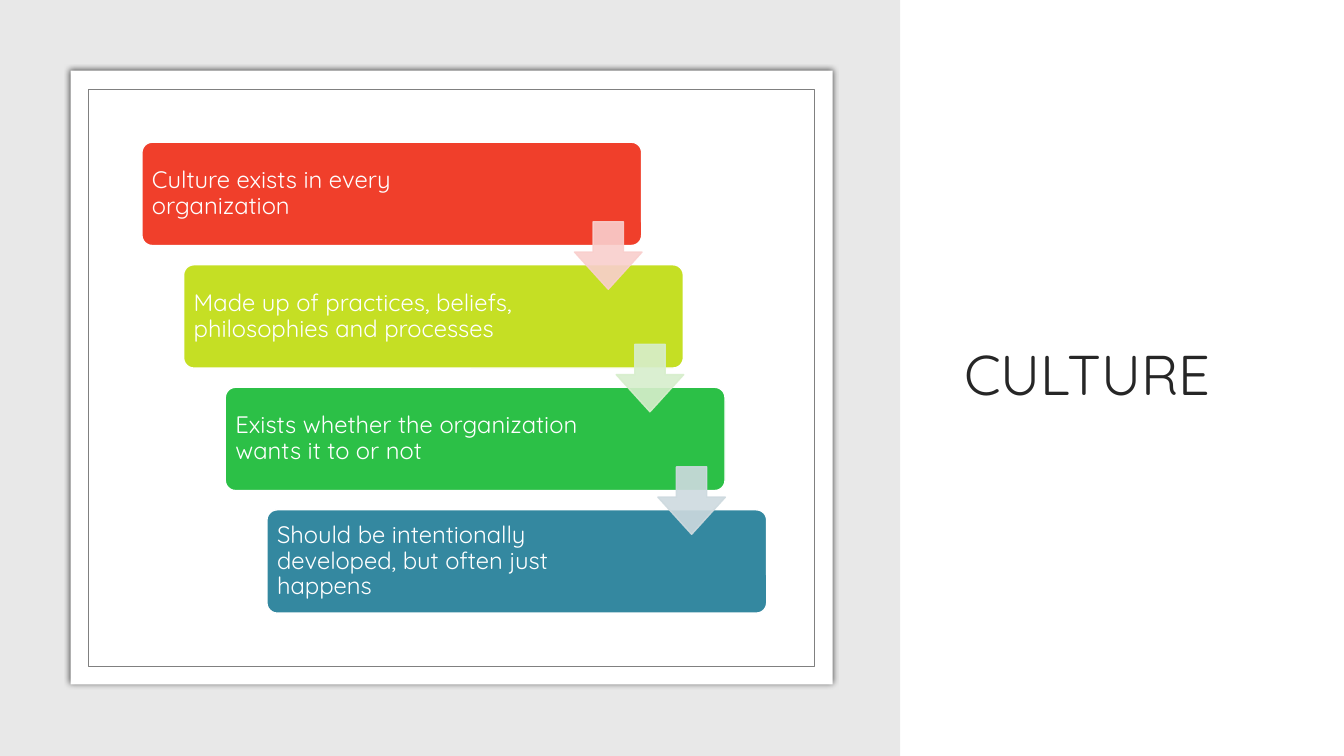
import lxml.etree
import pptx
import pptx.dml.color
import pptx.enum.shapes
import pptx.enum.text
import pptx.oxml.ns
import pptx.util

Pt = pptx.util.Pt
Kind = pptx.enum.shapes.MSO_SHAPE

TITLE = "CULTURE"
STEPS = [
    ("Culture exists in every organization", "F03F2B"),
    ("Made up of practices, beliefs, philosophies and processes", "C5DF24"),
    ("Exists whether the organization wants it to or not", "2CC047"),
    ("Should be intentionally developed, but often just happens", "3488A0"),
]
ARROWS = ["F9CFCD", "D7EECC", "CEDADF"]

THEME = {
    "font": "Quicksand", "white": "FFFFFF", "ink": "262626",
    "side": "D9D9D9", "frame": "808080", "shade": "000000",
    "title": 40, "body": 17,
}

WIDE, HIGH = 960, 540
DX, DY = 29.76, 87.52       # shift from one step to the next
BAR = (101.4, 101.6, 357, 73.8)
ARROW = (410.4, 158.4, 48.24, 48.24)
INSET = 2.16
TEXT_WIDE = [270.7, 274.3, 275, 274.3]


def tint(value):
    return pptx.dml.color.RGBColor.from_string(value)


def node(parent, name, **attrs):
    """Add a DrawingML child element."""
    return lxml.etree.SubElement(parent, pptx.oxml.ns.qn(name), attrs)


def draw(kind, box, fill, line=None, weight=1, alpha=100, adjust=()):
    shape = slide.shapes.add_shape(kind, *map(Pt, box))
    shape.shadow.inherit = False
    for spot, value in enumerate(adjust):
        shape.adjustments[spot] = value
    shape.fill.solid()
    shape.fill.fore_color.rgb = tint(fill)
    if line:
        shape.line.color.rgb = tint(line)
        shape.line.width = Pt(weight)
    else:
        shape.line.fill.background()
    if alpha < 100:
        for color in shape.element.spPr.iter(pptx.oxml.ns.qn("a:srgbClr")):
            node(color, "a:alpha", val=str(alpha * 1000))
    return shape


def glow(shape, blur, alpha):
    """Give the shape a soft shadow on all sides."""
    effects = shape.element.spPr.find(pptx.oxml.ns.qn("a:effectLst"))
    shadow = node(effects, "a:outerShdw", blurRad=str(Pt(blur)), dist="0",
                  dir="0", algn="ctr", rotWithShape="0")
    color = node(shadow, "a:srgbClr", val=THEME["shade"])
    node(color, "a:alpha", val=str(alpha * 1000))


def write(text, box, size, color, after=0, **frame):
    area = slide.shapes.add_textbox(*map(Pt, box)).text_frame
    frame |= {"word_wrap": True,
              "vertical_anchor": pptx.enum.text.MSO_ANCHOR.MIDDLE}
    para = area.paragraphs[0]
    run = para.add_run()
    formats = [
        (area, frame),
        (para, {"line_spacing": 0.9, "space_after": Pt(after)}),
        (run, {"text": text}),
        (run.font, {"name": THEME["font"], "size": Pt(size)}),
        (run.font.color, {"rgb": tint(color)}),
    ]
    for target, values in formats:
        for name, value in values.items():
            setattr(target, name, value)


def shift(box, index):
    left, top, wide, high = box
    return left + index * DX, top + index * DY, wide, high


deck = pptx.Presentation()
deck.slide_width, deck.slide_height = Pt(WIDE), Pt(HIGH)
slide = deck.slides.add_slide(deck.slide_layouts[6])
white = THEME["white"]

draw(Kind.RECTANGLE, (0, 0, WIDE, HIGH), white)
write(TITLE, (681.84, 50.4, 227.5, 438.5), THEME["title"], THEME["ink"])
draw(Kind.RECTANGLE, (0, 0, 643, HIGH), THEME["side"], alpha=60)
card = draw(Kind.RECTANGLE, (50.4, 50.4, 544.3, 438.5), white)
glow(card, 4, 66)
draw(Kind.RECTANGLE, (63.36, 64.08, 518.4, 412.2), white, THEME["frame"], 0.5)

margins = {f"margin_{side}": Pt(5.04)
           for side in ("left", "top", "right", "bottom")}
for index, (text, fill) in enumerate(STEPS):
    bar = shift(BAR, index)
    draw(Kind.ROUNDED_RECTANGLE, bar, fill, white, adjust=[0.1])
    left, top, wide, high = bar
    inner = (left + INSET, top + INSET, TEXT_WIDE[index], high - 2 * INSET)
    write(text, inner, THEME["body"], white, after=6, **margins)

for index, fill in enumerate(ARROWS):
    draw(Kind.DOWN_ARROW, shift(ARROW, index), fill, fill, alpha=90,
         adjust=[0.45, 0.55])

deck.save("out.pptx")
